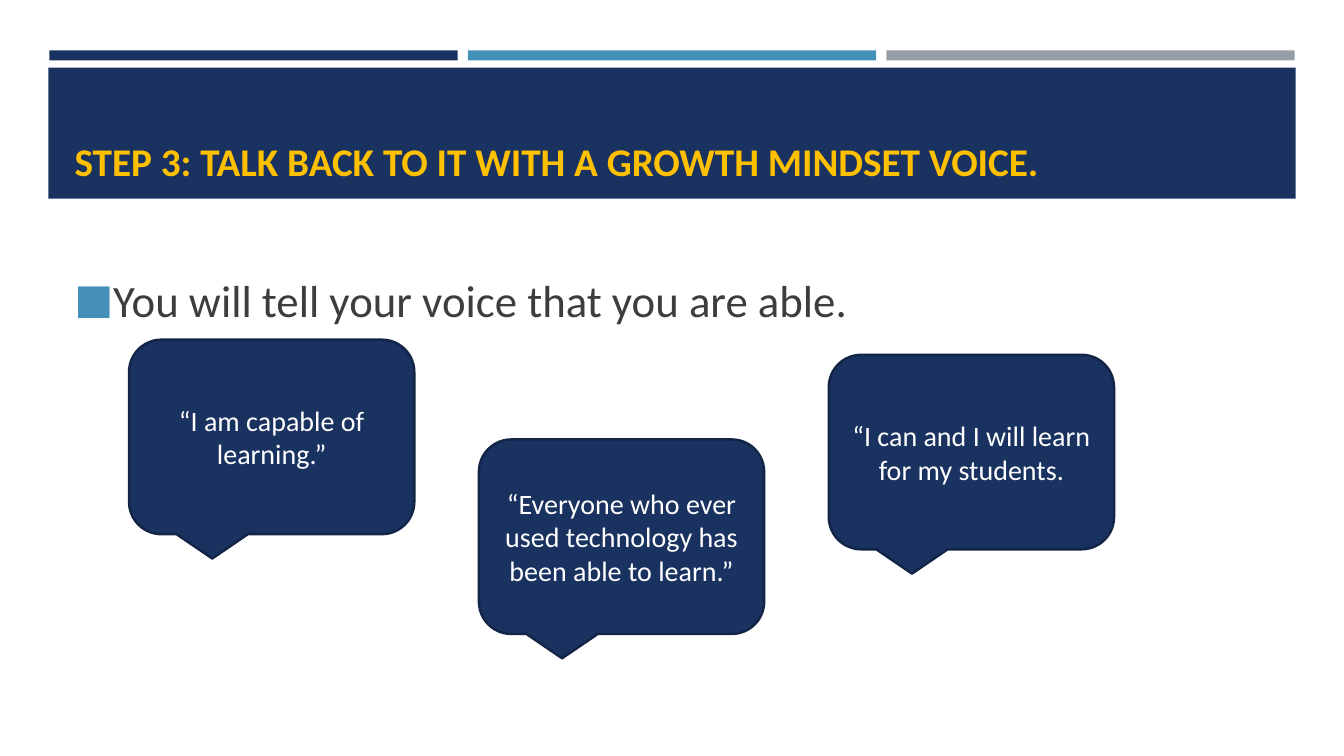
from dataclasses import dataclass

from lxml.etree import SubElement
from pptx import Presentation
from pptx.dml.color import RGBColor
from pptx.enum.shapes import MSO_SHAPE
from pptx.enum.text import MSO_ANCHOR, MSO_AUTO_SIZE, PP_ALIGN
from pptx.oxml.ns import qn
from pptx.util import Pt

PX = 9144  # 100 px to the inch
FONT = "Calibri"
COLORS = {
    "navy": "1A3260",
    "blue": "4590B8",
    "grey": "969FA7",
    "outline": "132547",
    "gold": "FFC000",
    "body": "3D3D3D",
    "white": "FFFFFF",
}


@dataclass(frozen=True)
class Box:
    left: int
    top: int
    width: int
    height: int

    def emu(self) -> tuple[int, int, int, int]:
        return self.left * PX, self.top * PX, self.width * PX, self.height * PX


@dataclass(frozen=True)
class Callout:
    top: int
    text: str


STRIPE_COLORS = ("navy", "blue", "grey")
STRIPE_LEFT, STRIPE_STEP = 49, 415
CALLOUT_LEFT, CALLOUT_STEP = 128, 347
CALLOUTS = (
    Callout(337, "“I am capable of learning.”"),
    Callout(436, "“Everyone who ever used technology has been able to learn.”"),
    Callout(352, "“I can and I will learn for my students."),
)


def rgb(name: str) -> RGBColor:
    return RGBColor.from_string(COLORS[name])


def add_filled(page, kind: MSO_SHAPE, box: Box, fill: str):
    shape = page.shapes.add_shape(kind, *box.emu())
    shape.shadow.inherit = False
    shape.fill.solid()
    shape.fill.fore_color.rgb = rgb(fill)
    shape.line.fill.background()
    return shape


def add_span(para, text: str, size: int, color: str, bold: bool = False) -> None:
    span = para.add_run()
    span.text = text
    span.font.name = FONT
    span.font.size = Pt(size)
    span.font.bold = bold
    span.font.color.rgb = rgb(color)


def add_square_bullet(para, indent: int) -> None:
    properties = para._p.get_or_add_pPr()
    properties.set("marL", str(indent * PX))
    properties.set("indent", str(-indent * PX))
    color = SubElement(properties, qn("a:buClr"))
    SubElement(color, qn("a:srgbClr"), val=COLORS["blue"])
    SubElement(properties, qn("a:buSzPct"), val="92000")
    SubElement(properties, qn("a:buFont"), typeface=FONT)
    SubElement(properties, qn("a:buChar"), char="■")


def add_title(page, band) -> None:
    title = page.shapes.title
    band.element.addnext(title.element)  # lift the title above its band
    title.left, title.top, title.width, title.height = Box(64, 77, 1206, 111).emu()
    frame = title.text_frame
    frame.auto_size = MSO_AUTO_SIZE.NONE
    frame.vertical_anchor = MSO_ANCHOR.BOTTOM
    para = frame.paragraphs[0]
    para.alignment = PP_ALIGN.LEFT
    add_span(para, "STEP 3: TALK BACK TO IT WITH A GROWTH MINDSET VOICE.", 28, "gold", True)


def add_body(page) -> None:
    frame = page.shapes.add_textbox(*Box(64, 238, 1206, 173).emu()).text_frame
    frame.word_wrap = True
    frame.vertical_anchor = MSO_ANCHOR.TOP
    frame.margin_top = 33 * PX
    para = frame.paragraphs[0]
    add_square_bullet(para, 33)
    add_span(para, "You will tell your voice that you are able.", 32, "body")


def add_callout(page, left: int, callout: Callout) -> None:
    box = Box(left, callout.top, 283, 193)
    shape = add_filled(page, MSO_SHAPE.ROUNDED_RECTANGULAR_CALLOUT, box, "navy")
    shape.line.color.rgb = rgb("outline")
    shape.line.width = Pt(1.75)
    frame = shape.text_frame
    frame.word_wrap = True
    frame.vertical_anchor = MSO_ANCHOR.MIDDLE
    para = frame.paragraphs[0]
    para.alignment = PP_ALIGN.CENTER
    add_span(para, callout.text, 20, "white")


def main() -> None:
    deck = Presentation()
    deck.slide_width, deck.slide_height = 1333 * PX, 750 * PX
    page = deck.slides.add_slide(deck.slide_layouts[5])

    # Stripes and title band
    for index, color in enumerate(STRIPE_COLORS):
        stripe = Box(STRIPE_LEFT + index * STRIPE_STEP, 50, 405, 10)
        add_filled(page, MSO_SHAPE.RECTANGLE, stripe, color)
    band = add_filled(page, MSO_SHAPE.RECTANGLE, Box(48, 67, 1237, 130), "navy")

    # Title and bullet
    add_title(page, band)
    add_body(page)

    # Speech bubbles
    for index, callout in enumerate(CALLOUTS):
        add_callout(page, CALLOUT_LEFT + index * CALLOUT_STEP, callout)

    deck.save("out.pptx")


if __name__ == "__main__":
    main()
